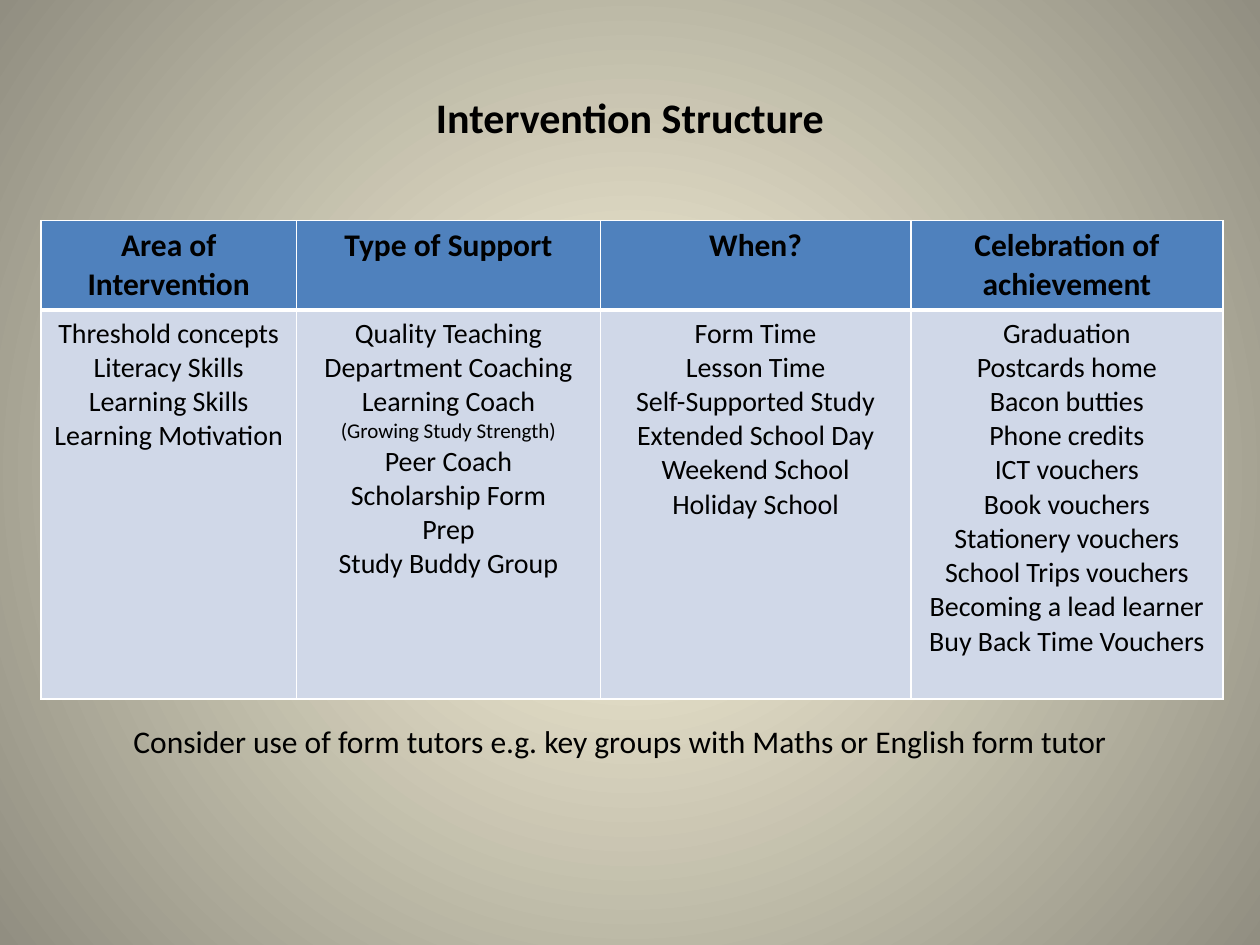
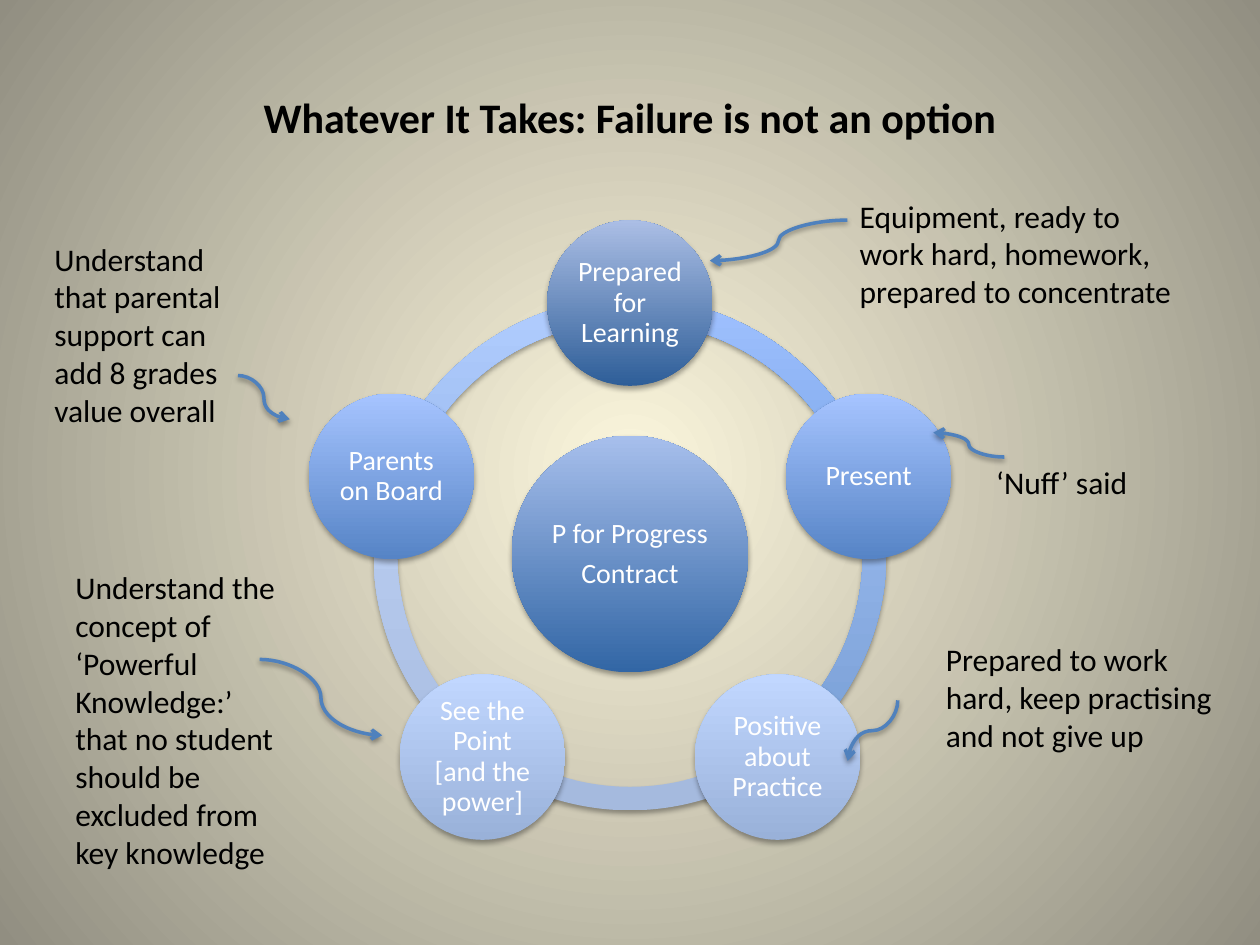
import math
from dataclasses import dataclass
from typing import Any, NamedTuple

from lxml import etree
from pptx import Presentation
from pptx.dml.color import RGBColor
from pptx.enum import dml, shapes, text
from pptx.oxml.ns import qn
from pptx.util import Pt


class Gradient(NamedTuple):
    """Colours from the bottom (or centre) outwards."""
    start: str
    end: str


class Box(NamedTuple):
    left: float
    top: float
    width: float
    height: float

    def lengths(self) -> list[Pt]:
        return [Pt(value) for value in self]


class Node(NamedTuple):
    label: str
    fill: Gradient
    arc_fill: Gradient


@dataclass(frozen=True)
class Callout:
    words: str
    box: Box
    arrow_from: tuple[float, float]
    arrow_to: tuple[float, float]
    starts_downward: bool = False


@dataclass(frozen=True)
class Column:
    heading: str
    width: float
    lines: tuple[str, ...]


@dataclass(frozen=True)
class Theme:
    font: str = "Calibri"
    ink: str = "000000"
    white: str = "FFFFFF"
    accent: str = "4F81BD"
    table_body: str = "D0D8E8"
    background: Gradient = Gradient("FCF7DD", "918E81")
    hub: Gradient = Gradient("3266A5", "A7BFEC")
    dark_node: Gradient = Gradient("2E5E98", "ABBEE5")
    mid_node: Gradient = Gradient("5684C6", "A6C4FF")
    light_node: Gradient = Gradient("99B1D9", "C1D7FF")
    dark_arc: Gradient = Gradient("3C7AC4", "A0C1FF")
    mid_arc: Gradient = Gradient("7199D0", "B1CDFF")
    light_arc: Gradient = Gradient("A5BADE", "C8DBFF")
    title_size: float = 24
    text_size: float = 18
    label_size: float = 16
    note_size: float = 12


THEME = Theme()
TITLE_BOX = Box(36, 21.6, 648, 90)

TABLE_LEFT, TABLE_TOP = 23.3, 126
ROW_HEIGHTS = (50.8, 222.4)
COLUMNS = (
    Column("Area of Intervention", 146.2, (
        "Threshold concepts", "Literacy Skills", "Learning Skills",
        "Learning Motivation")),
    Column("Type of Support", 173.6, (
        "Quality Teaching", "Department Coaching", "Learning Coach",
        "(Growing Study Strength)", "Peer Coach", "Scholarship Form",
        "Prep", "Study Buddy Group")),
    Column("When?", 177.4, (
        "Form Time", "Lesson Time", "Self-Supported Study",
        "Extended School Day", "Weekend School", "Holiday School")),
    Column("Celebration of achievement", 178.4, (
        "Graduation", "Postcards home", "Bacon butties", "Phone credits",
        "ICT vouchers", "Book vouchers", "Stationery vouchers",
        "School Trips vouchers", "Becoming a lead learner",
        "Buy Back Time Vouchers")),
)

CENTRE_X, CENTRE_Y = 360, 316.6
ORBIT_RADIUS = 143.4
RING_SIZE, HUB_SIZE, NODE_SIZE = 293, 135.2, 94.6
RING_THICKNESS = 0.046
NODES = (  # clockwise from the top; each arc leads to the next node
    Node("Prepared for Learning", THEME.dark_node, THEME.dark_arc),
    Node("Present", THEME.mid_node, THEME.mid_arc),
    Node("Positive about Practice", THEME.light_node, THEME.light_arc),
    Node("See the Point [and the power]", THEME.light_node, THEME.light_arc),
    Node("Parents on Board", THEME.mid_node, THEME.mid_arc),
)
CALLOUTS = (
    Callout("Equipment, ready to work hard, homework, prepared to concentrate",
            Box(484.2, 108.8, 199.4, 72.7), (484.2, 125.8), (405.6, 149)),
    Callout("‘Nuff’ said",
            Box(562.2, 261.2, 133.2, 29), (574, 261.2), (533.4, 247.2)),
    Callout("Prepared to work hard, keep practising and not give up",
            Box(533.4, 362.4, 167, 72.7), (513, 400.2), (484.4, 434.8), True),
    Callout("Understand the concept of ‘Powerful Knowledge:’ that no student "
            "should be excluded from key knowledge",
            Box(36, 321.2, 129.6, 181.4), (148.4, 376.8), (218.4, 420.2)),
    Callout("Understand that parental support can add 8 grades value overall",
            Box(24, 133.4, 132.4, 116.6), (136, 214.6), (165.6, 239.6)),
)


def set_all(target: Any, values: dict[str, Any]) -> None:
    for name, value in values.items():
        setattr(target, name, value)


def write(frame: Any, lines: tuple[str, ...], size: float, colour: str = THEME.ink,
          bold: bool = False, **paragraph_format: Any) -> None:
    """Fill a text frame, one paragraph a line; a line in round brackets is a note."""
    frame.text = "\n".join(lines)
    for para in frame.paragraphs:
        set_all(para, paragraph_format)
        is_note = para.text.startswith("(")
        for span in para.runs:
            set_all(span.font, {"name": THEME.font, "bold": bold,
                                "size": Pt(THEME.note_size if is_note else size)})
            span.font.color.rgb = RGBColor.from_string(colour)


def fill_gradient(fill: Any, gradient: Gradient) -> None:
    fill.gradient()
    fill.gradient_angle = 90
    for stop, colour in zip(fill.gradient_stops, gradient):
        stop.color.rgb = RGBColor.from_string(colour)


def set_background(master: Any) -> None:
    """Give every slide a gradient that spreads from the middle."""
    fill_gradient(master.background.fill, THEME.background)
    gradient = next(master.element.iter(qn("a:gradFill")))
    gradient.remove(gradient.find(qn("a:lin")))
    spread = etree.SubElement(gradient, qn("a:path"), path="circle")
    etree.SubElement(spread, qn("a:fillToRect"),
                     {side: "50000" for side in "ltrb"})


def add_shadow(item: Any, distance: float, opacity: int) -> None:
    effects = etree.SubElement(item.element.spPr, qn("a:effectLst"))
    shadow = etree.SubElement(
        effects, qn("a:outerShdw"), blurRad=str(Pt(3.1)), dist=str(Pt(distance)),
        dir="5400000", rotWithShape="0")
    colour = etree.SubElement(shadow, qn("a:srgbClr"), val="000000")
    etree.SubElement(colour, qn("a:alpha"), val=str(opacity * 1000))


def add_titled_slide(deck: Any, title: str) -> Any:
    page = deck.slides.add_slide(deck.slide_layouts[5])
    holder = page.shapes.title
    set_all(holder, dict(zip(Box._fields, TITLE_BOX.lengths())))
    holder.text_frame.vertical_anchor = text.MSO_ANCHOR.MIDDLE
    write(holder.text_frame, (title,), THEME.title_size, bold=True,
          alignment=text.PP_ALIGN.CENTER)
    return page


def add_text(page: Any, box: Box, words: str) -> None:
    frame = page.shapes.add_textbox(*box.lengths()).text_frame
    set_all(frame, {"word_wrap": True,
                    "auto_size": text.MSO_AUTO_SIZE.SHAPE_TO_FIT_TEXT})
    write(frame, (words,), THEME.text_size)


def set_borders(cell: Any, top: float = 1, bottom: float = 1) -> None:
    properties = cell._tc.get_or_add_tcPr()
    for side, width in {"L": 1, "R": 1, "T": top, "B": bottom}.items():
        line = etree.SubElement(properties, qn(f"a:ln{side}"), w=str(Pt(width)))
        fill = etree.SubElement(line, qn("a:solidFill"))
        etree.SubElement(fill, qn("a:srgbClr"), val=THEME.white)


def add_structure_table(page: Any) -> None:
    box = Box(TABLE_LEFT, TABLE_TOP, sum(column.width for column in COLUMNS),
              sum(ROW_HEIGHTS))
    table = page.shapes.add_table(2, len(COLUMNS), *box.lengths()).table
    table.horz_banding = False
    for row, height in zip(table.rows, ROW_HEIGHTS):
        row.height = Pt(height)
    for index, column in enumerate(COLUMNS):
        table.columns[index].width = Pt(column.width)
        heading, body = table.cell(0, index), table.cell(1, index)
        set_borders(heading, bottom=3)
        set_borders(body, top=3)
        for cell, colour, lines, size in (
                (heading, THEME.accent, (column.heading,), THEME.text_size),
                (body, THEME.table_body, column.lines, THEME.label_size)):
            cell.fill.solid()
            cell.fill.fore_color.rgb = RGBColor.from_string(colour)
            write(cell.text_frame, lines, size, bold=cell is heading,
                  alignment=text.PP_ALIGN.CENTER)


def add_round(page: Any, kind: Any, x: float, y: float, size: float,
              gradient: Gradient) -> Any:
    """Draw a shaded round shape about the point x, y."""
    box = Box(x - size / 2, y - size / 2, size, size)
    shape = page.shapes.add_shape(kind, *box.lengths())
    fill_gradient(shape.fill, gradient)
    shape.line.fill.background()
    add_shadow(shape, 1.8, 35)
    return shape


def add_disc(page: Any, x: float, y: float, size: float, gradient: Gradient,
             *lines: str) -> None:
    disc = add_round(page, shapes.MSO_SHAPE.OVAL, x, y, size, gradient)
    margins = {f"margin_{side}": Pt(1.6) for side in ("left", "top", "right", "bottom")}
    set_all(disc.text_frame, margins | {
        "word_wrap": True, "vertical_anchor": text.MSO_ANCHOR.MIDDLE})
    write(disc.text_frame, lines, THEME.label_size, THEME.white,
          alignment=text.PP_ALIGN.CENTER, line_spacing=0.9, space_after=Pt(5.6))


def add_progress_ring(page: Any) -> None:
    step = 360 / len(NODES)
    angles = [(270 + step * index) % 360 for index in range(len(NODES))]
    for node, angle in reversed(list(zip(NODES, angles))):
        arc = add_round(page, shapes.MSO_SHAPE.BLOCK_ARC, CENTRE_X, CENTRE_Y,
                        RING_SIZE, node.arc_fill)
        # Adjustments count 60000 units a degree, in steps of 100000.
        arc.adjustments[0] = angle * 0.6
        arc.adjustments[1] = (angle + step) % 360 * 0.6
        arc.adjustments[2] = RING_THICKNESS
    add_disc(page, CENTRE_X, CENTRE_Y, HUB_SIZE, THEME.hub, "P for Progress", "Contract")
    for node, angle in zip(NODES, angles):
        x = CENTRE_X + ORBIT_RADIUS * math.cos(math.radians(angle))
        y = CENTRE_Y + ORBIT_RADIUS * math.sin(math.radians(angle))
        add_disc(page, x, y, NODE_SIZE, node.fill, node.label)


def add_curved_arrow(page: Any, callout: Callout) -> None:
    (x1, y1), (x2, y2) = callout.arrow_from, callout.arrow_to
    if callout.starts_downward:  # ends before the quarter turn
        middle_x, middle_y = (x1 + x2) / 2, (y1 + y2) / 2
        half_width, half_height = (y2 - y1) / 2, (x1 - x2) / 2
        x1, x2 = middle_x - half_width, middle_x + half_width
        y1, y2 = middle_y - half_height, middle_y + half_height
    arrow = page.shapes.add_connector(shapes.MSO_CONNECTOR.CURVE,
                                      Pt(x1), Pt(y1), Pt(x2), Pt(y2))
    if callout.starts_downward:
        arrow.element.spPr.find(qn("a:xfrm")).set("rot", "5400000")
    set_all(arrow.line, {"width": Pt(2), "dash_style": dml.MSO_LINE.SOLID})
    arrow.line.color.rgb = RGBColor.from_string(THEME.accent)
    etree.SubElement(arrow.element.spPr.find(qn("a:ln")), qn("a:tailEnd"), type="arrow")
    add_shadow(arrow, 1.6, 38)


def main() -> None:
    deck = Presentation()
    set_all(deck, {"slide_width": Pt(720), "slide_height": Pt(540)})
    set_background(deck.slide_master)

    page = add_titled_slide(deck, "Intervention Structure")
    add_structure_table(page)
    add_text(page, Box(69.2, 409, 592.6, 29),
             "Consider use of form tutors e.g. key groups with Maths or English form tutor")

    page = add_titled_slide(deck, "Whatever It Takes: Failure is not an option")
    add_progress_ring(page)
    for callout in CALLOUTS:
        add_text(page, callout.box, callout.words)
        add_curved_arrow(page, callout)

    deck.save("out.pptx")


if __name__ == "__main__":
    main()
